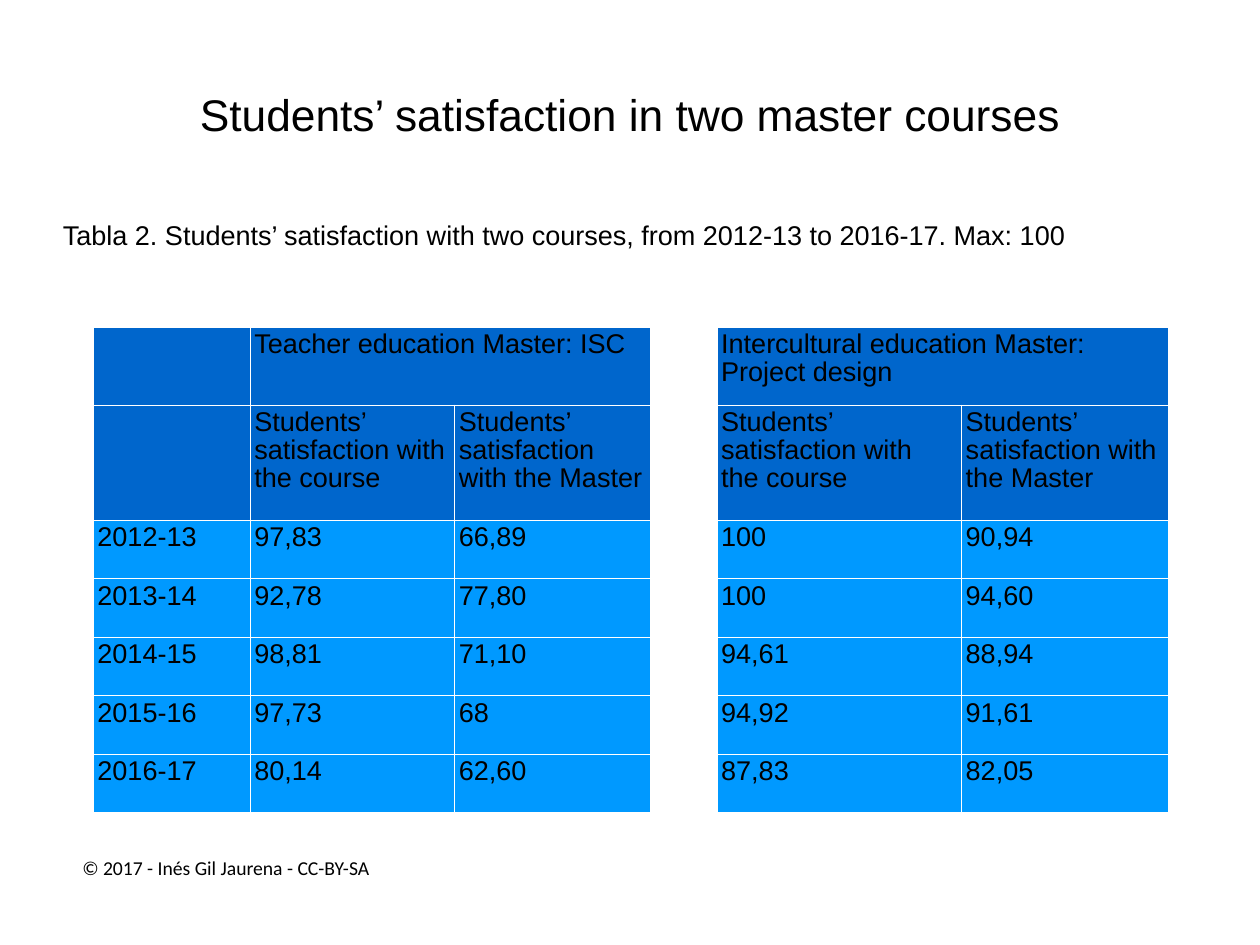
from dataclasses import dataclass
from typing import Any

from lxml import etree
from pptx import Presentation
from pptx import util as u
from pptx.dml import color
from pptx.enum import text
from pptx.oxml import ns

SCALE = 9144
COLORS = {"ink": "000000", "line": "FFFFFF", "head": "0066CC", "body": "0099FF"}
ALIGN = text.PP_ALIGN
ANCHOR = text.MSO_ANCHOR

COLS = [177, 231, 221, 75, 276, 233]
ROWS = [88, 130] + [66] * 5
GAP = 3
HEADS = 2
PAIR = ["Students’ satisfaction with the course", "Students’ satisfaction with the Master"]
DATA = [
    ["", "Teacher education Master: ISC", "", "", "Intercultural education Master: Project design", ""],
    ["", *PAIR, "", *PAIR],
    ["2012-13", "97,83", "66,89", "", "100", "90,94"],
    ["2013-14", "92,78", "77,80", "", "100", "94,60"],
    ["2014-15", "98,81", "71,10", "", "94,61", "88,94"],
    ["2015-16", "97,73", "68", "", "94,92", "91,61"],
    ["2016-17", "80,14", "62,60", "", "87,83", "82,05"],
]


@dataclass
class Label:
    words: str
    box: tuple[int, int, int, int]
    size: int
    font: str = "Arial"
    align: Any = ALIGN.LEFT
    anchor: Any = ANCHOR.TOP
    inset: int = 0
    pitch: float | None = 0.93
    before: int = 0
    hang: int = 0
    grow: bool = False


LABELS = [
    Label("Students’ satisfaction in two master courses", (71, 43, 1280, 178), 36,
          align=ALIGN.CENTER, anchor=ANCHOR.MIDDLE),
    Label("Tabla 2. Students’ satisfaction with two courses, from 2012-13 to 2016-17. Max: 100",
          (71, 250, 1280, 704), 22, before=18, hang=48),
    Label("© 2017 - Inés Gil Jaurena - CC-BY-SA", (62, 961, 386, 38), 16, font="Calibri",
          align=ALIGN.CENTER, anchor=ANCHOR.MIDDLE, inset=6, pitch=None, grow=True),
]


def px(num: int) -> u.Emu:
    return u.Emu(num * SCALE)


def rgb(name: str) -> color.RGBColor:
    return color.RGBColor.from_string(COLORS[name])


def write(frame: Any, words: str, *, size: int, font: str = "Arial", align: Any = ALIGN.LEFT,
          pitch: float | None = 0.93, before: int = 0, hang: int = 0) -> None:
    para = frame.paragraphs[0]
    para.alignment = align
    para.line_spacing = pitch
    para.space_before = u.Pt(before)
    if hang:
        props = para._p.get_or_add_pPr()
        props.set("marL", str(px(hang)))
        props.set("indent", str(px(-hang)))
    run = para.add_run()
    run.text = words
    run.font.size = u.Pt(size)
    run.font.name = font
    run.font.color.rgb = rgb("ink")


def place(slide: Any, item: Label) -> None:
    frame = slide.shapes.add_textbox(*map(px, item.box)).text_frame
    frame.word_wrap = True
    frame.vertical_anchor = item.anchor
    frame.margin_left = frame.margin_right = px(item.inset)
    frame.margin_top = frame.margin_bottom = px(item.inset)
    if item.grow:
        frame.auto_size = text.MSO_AUTO_SIZE.SHAPE_TO_FIT_TEXT
    write(frame, item.words, size=item.size, font=item.font, align=item.align,
          pitch=item.pitch, before=item.before, hang=item.hang)


def edge(cell: Any, sides: str) -> None:
    props = cell._tc.get_or_add_tcPr()
    for side in sides:
        line = etree.SubElement(props, ns.qn(f"a:ln{side}"), w=str(u.Pt(0.25)))
        fill = etree.SubElement(line, ns.qn("a:solidFill"))
        etree.SubElement(fill, ns.qn("a:srgbClr"), val=COLORS["line"])


def grid(slide: Any) -> None:
    size = (sum(COLS), sum(ROWS))
    table = slide.shapes.add_table(len(ROWS), len(COLS), *map(px, (105, 369, *size))).table
    table.first_row = table.horz_banding = False
    for col, wide in zip(table.columns, COLS):
        col.width = px(wide)
    for row, tall in zip(table.rows, ROWS):
        row.height = px(tall)
    for r, line in enumerate(DATA):
        for c, words in enumerate(line):
            cell = table.cell(r, c)
            cell.margin_left = cell.margin_right = px(5)
            cell.margin_top = cell.margin_bottom = px(5)
            edge(cell, "LR" if c == GAP else "LRTB")
            if c == GAP:
                cell.fill.background()
            else:
                cell.fill.solid()
                cell.fill.fore_color.rgb = rgb("head" if r < HEADS else "body")
            if words:
                write(cell.text_frame, words, size=22, before=5)
    for c in (1, GAP + 1):
        table.cell(0, c).merge(table.cell(0, c + 1))


def main() -> None:
    deck = Presentation()
    deck.slide_width, deck.slide_height = px(1422), px(1067)
    slide = deck.slides.add_slide(deck.slide_layouts[6])
    title, note, credit = LABELS
    place(slide, title)
    place(slide, note)
    grid(slide)
    place(slide, credit)
    deck.save("out.pptx")


if __name__ == "__main__":
    main()
